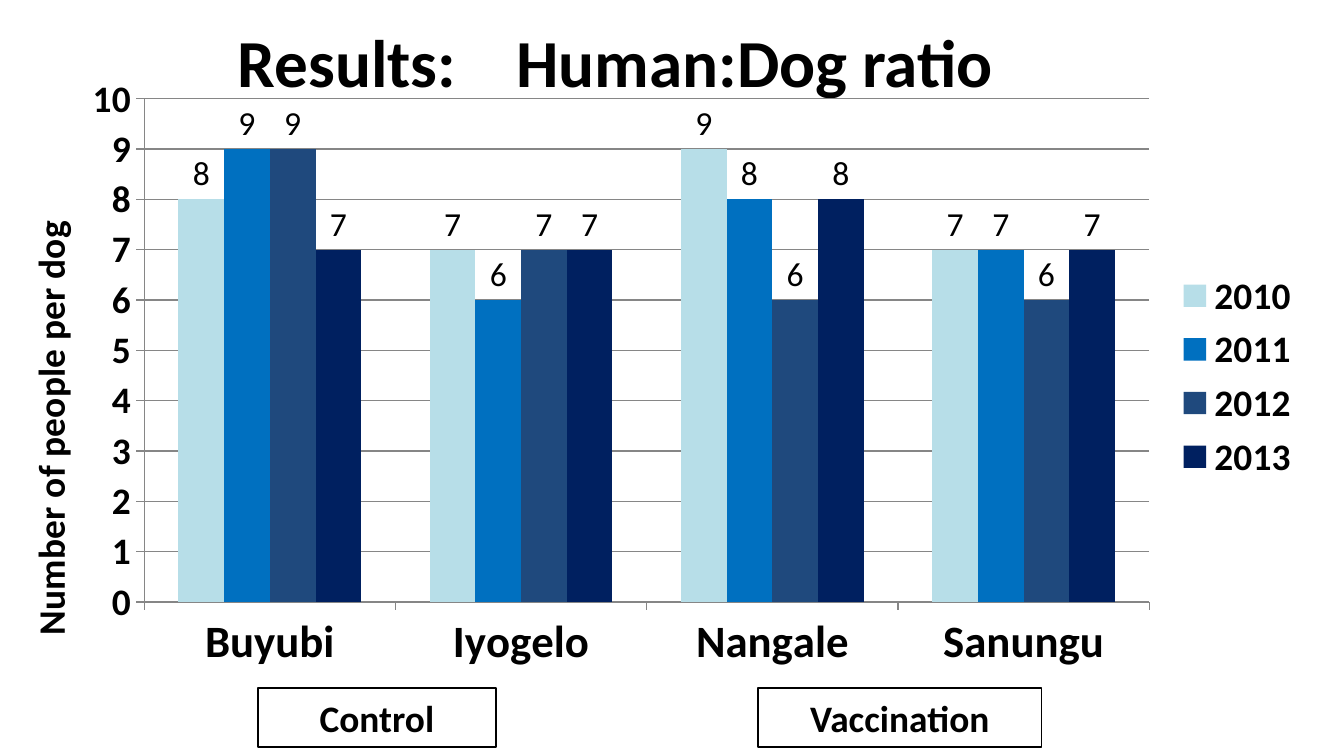
from dataclasses import dataclass

from lxml import etree
from pptx import Presentation
from pptx.chart.data import CategoryChartData
from pptx.dml.color import RGBColor
from pptx.enum.chart import (XL_CHART_TYPE, XL_LABEL_POSITION,
                             XL_LEGEND_POSITION, XL_TICK_MARK)
from pptx.enum.shapes import MSO_SHAPE
from pptx.enum.text import MSO_ANCHOR, PP_ALIGN
from pptx.oxml import parse_xml
from pptx.oxml.ns import nsdecls
from pptx.util import Inches, Pt


@dataclass
class Theme:
    font: str = "Calibri"
    ink: str = "000000"
    rule: str = "868686"
    fills: tuple = ("B7DEE8", "0070C0", "1F497D", "002060")
    title: int = 36
    names: int = 24
    body: int = 20
    label: int = 18


VILLAGES = ("Buyubi", "Iyogelo", "Nangale", "Sanungu")
RATIOS = {
    "2010": (8, 7, 9, 7),
    "2011": (9, 6, 8, 7),
    "2012": (9, 7, 6, 6),
    "2013": (7, 7, 8, 7),
}


class Deck:
    def __init__(self, theme):
        self.theme = theme
        self.prs = Presentation()
        # Widescreen, 16:9
        self.prs.slide_width = Inches(10)
        self.prs.slide_height = Inches(10) * 9 // 16
        self.slide = self.prs.slides.add_slide(self.prs.slide_layouts[5])

    def style(self, font, size, bold=True):
        font.name = self.theme.font
        font.size = Pt(size)
        font.bold = bold
        font.color.rgb = RGBColor.from_string(self.theme.ink)

    def run(self, para, text, size):
        run = para.add_run()
        run.text = text
        self.style(run.font, size)
        return run

    def title(self, left, right, gap, box):
        """Two title parts, with the space between them widened by gap points."""
        shape = self.slide.shapes.title
        shape.left, shape.top, shape.width, shape.height = map(Inches, box)
        shape.text_frame.vertical_anchor = MSO_ANCHOR.MIDDLE
        para = shape.text_frame.paragraphs[0]
        para.alignment = PP_ALIGN.CENTER
        self.run(para, left, self.theme.title)
        space = self.run(para, " ", self.theme.title)
        space.font._element.set("spc", str(gap * 100))
        self.run(para, right, self.theme.title)

    def box(self, text, box):
        shape = self.slide.shapes.add_shape(MSO_SHAPE.RECTANGLE, *map(Inches, box))
        shape.shadow.inherit = False
        shape.fill.background()
        shape.line.color.rgb = RGBColor.from_string(self.theme.ink)
        shape.line.width = Pt(0.75)
        para = shape.text_frame.paragraphs[0]
        para.alignment = PP_ALIGN.CENTER
        self.run(para, text, self.theme.body)

    def layout(self, **parts):
        """Manual chart layout; parts are fractions of the chart area."""
        node = parse_xml(f"<c:layout {nsdecls('c')}><c:manualLayout/></c:layout>")
        for tag, value in parts.items():
            etree.SubElement(node[0], f"{{{node.nsmap['c']}}}{tag}").set("val", str(value))
        return node

    def rule(self, line):
        line.color.rgb = RGBColor.from_string(self.theme.rule)
        line.width = Pt(0.75)

    def chart(self, names, rows, caption, box):
        data = CategoryChartData(number_format="#,##0")
        data.categories = names
        for name, values in rows.items():
            data.add_series(name, values)
        chart = self.slide.shapes.add_chart(
            XL_CHART_TYPE.COLUMN_CLUSTERED, *map(Inches, box), data).chart
        self.style(chart.font, 10, False)
        chart.has_title = False

        # Bars and their labels
        plot = chart.plots[0]
        plot.gap_width, plot.overlap, plot.vary_by_categories = 150, 0, False
        for series, color in zip(plot.series, self.theme.fills):
            series.format.fill.solid()
            series.format.fill.fore_color.rgb = RGBColor.from_string(color)
            labels = series.data_labels
            labels.show_value = True
            labels.number_format, labels.number_format_is_linked = "#,##0", False
            labels.position = XL_LABEL_POSITION.OUTSIDE_END
            self.style(labels.font, self.theme.label, False)

        # Axes
        across, up = chart.category_axis, chart.value_axis
        for axis, size in ((across, self.theme.names), (up, self.theme.body)):
            axis.major_tick_mark = XL_TICK_MARK.OUTSIDE
            axis.minor_tick_mark = XL_TICK_MARK.NONE
            self.style(axis.tick_labels.font, size)
            self.rule(axis.format.line)
        up.minimum_scale, up.maximum_scale, up.major_unit = 0, 10, 1
        up.has_major_gridlines = True
        self.rule(up.major_gridlines.format.line)

        # Value axis title
        frame = up.axis_title.text_frame
        frame._txBody.bodyPr.set("rot", "-5400000")
        frame._txBody.bodyPr.set("vert", "horz")
        self.run(frame.paragraphs[0], caption, self.theme.body)
        head = up.axis_title._element
        for old in head.xpath("c:layout"):
            head.remove(old)
        head.xpath("c:tx")[0].addnext(
            self.layout(xMode="edge", yMode="edge", x=0.01, y=0.24))

        # Legend and plot area
        chart.has_legend = True
        chart.legend.position = XL_LEGEND_POSITION.RIGHT
        chart.legend.include_in_layout = False
        self.style(chart.legend.font, self.theme.body)
        area = chart._chartSpace.xpath("c:chart/c:plotArea")[0]
        for old in area.xpath("c:layout"):
            area.remove(old)
        area.insert(0, self.layout(layoutTarget="inner", xMode="edge", yMode="edge",
                                   x=0.107, y=0.055, w=0.767, h=0.807))


def main():
    deck = Deck(Theme())
    deck.title("Results:", "Human:Dog ratio", 24, (0.08, 0.1, 9, 0.71))
    deck.chart(VILLAGES, RATIOS, "Number of people per dog", (0.03, 0.48, 9.75, 4.64))
    # Study arms under the village pairs
    for text, left, width in (("Control", 1.92, 1.77), ("Vaccination", 5.64, 2.11)):
        deck.box(text, (left, 5.12, width, 0.44))
    deck.prs.save("out.pptx")


if __name__ == "__main__":
    main()
